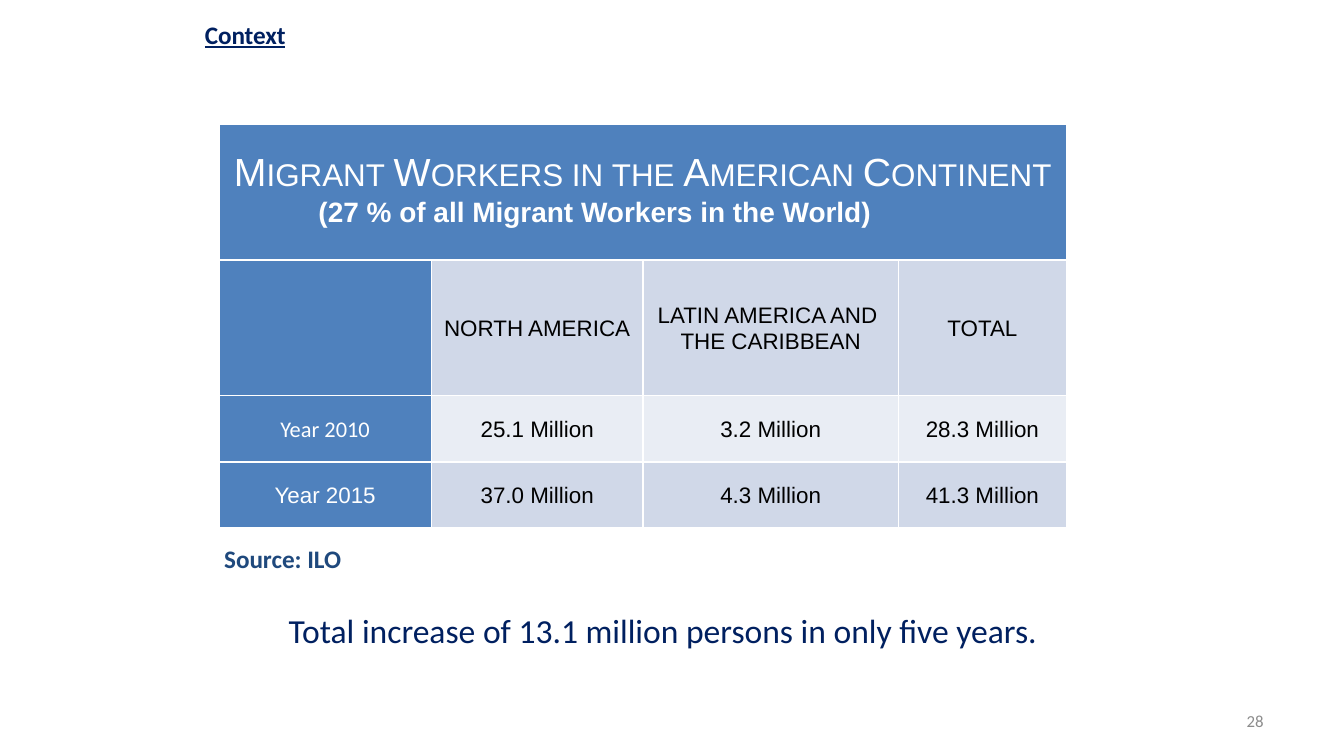
"""Build a slide with a table of migrant workers in the American continent."""
from lxml.etree import SubElement
from pptx import Presentation
from pptx.dml.color import RGBColor
from pptx.enum.text import MSO_ANCHOR as ANC, MSO_AUTO_SIZE as FIT, PP_ALIGN as AL
from pptx.oxml.ns import qn
from pptx.util import Inches, Pt

rgb = RGBColor.from_string
U = Inches(0.1)
NAVY, BLUE, WHITE, BLACK = "002060", "4F81BD", "FFFFFF", "000000"


def grid(*units):
    return [round(n * U) for n in units]


def write(p, text, size, color, name="Arial", align=AL.CENTER, spacing=None, **style):
    p.text, p.alignment, p.line_spacing = text, align, spacing
    for br in p._p.findall(qn("a:br")):
        SubElement(br, qn("a:rPr"), sz=str(size * 100))
    for r in p.runs:
        r.font.color.rgb = rgb(color)
        for key, value in {"size": Pt(size), "name": name, "bold": False, **style}.items():
            setattr(r.font, key, value)


prs = Presentation()
prs.slide_width, prs.slide_height = grid(100, 56.25)
s = prs.slides.add_slide(prs.slide_layouts[5])

title = s.shapes.title
title.left, title.top, title.width, title.height = grid(14.2, 0.95, 8.1, 3.3)
tf = title.text_frame
for key, value in {"word_wrap": False, "auto_size": FIT.SHAPE_TO_FIT_TEXT,
                   "vertical_anchor": ANC.TOP}.items():
    setattr(tf, key, value)
write(tf.paragraphs[0], "Context", 13.5, NAVY, "Calibri", bold=True, underline=True)

cols, rows = [15.8, 15.75, 19, 12.5], [10.1, 10.1, 4.93, 4.93]
table = s.shapes.add_table(len(rows), len(cols), *grid(16.3, 9.24, sum(cols), sum(rows))).table
for col, width in zip(table.columns, grid(*cols)):
    col.width = width
for row, height in zip(table.rows, grid(*rows)):
    row.height = height

data = [
    ["", "", "", ""],
    ["", "NORTH AMERICA", "LATIN AMERICA AND \vTHE CARIBBEAN", "TOTAL"],
    ["Year 2010", "25.1 Million", "3.2 Million", "28.3 Million"],
    ["Year 2015", "37.0 Million", "4.3 Million", "41.3 Million"],
]
bands = [BLUE, "D0D8E8", "E9EDF4", "D0D8E8"]
for i, texts in enumerate(data):
    for j, text in enumerate(texts):
        cell = table.cell(i, j)
        for key, value in {"margin_left": Inches(0.06), "margin_right": Inches(0.06),
                           "margin_top": 0, "margin_bottom": 0,
                           "vertical_anchor": ANC.MIDDLE if i else ANC.TOP}.items():
            setattr(cell, key, value)
        tcPr = cell._tc.get_or_add_tcPr()
        for side in "LRTB":
            ln = SubElement(tcPr, qn(f"a:ln{side}"), w=str(Pt(1)))
            SubElement(SubElement(ln, qn("a:solidFill")), qn("a:srgbClr"), val=WHITE)
        cell.fill.solid()
        cell.fill.fore_color.rgb = rgb(bands[i] if j else BLUE)
        if text:
            name = "Calibri" if text == "Year 2010" else "Arial"
            write(cell.text_frame.paragraphs[0], text, 12, BLACK if j else WHITE, name, spacing=1.07)

head = table.cell(0, 0)
head.merge(table.cell(0, len(cols) - 1))
head.margin_top = Inches(0.18)
tf = head.text_frame
p = tf.paragraphs[0]
write(p, "Migrant Workers in the American Continent", 21, WHITE, spacing=1.07)
p.runs[0].font._element.set("cap", "small")
p = tf.add_paragraph()
write(p, "(27 % of all Migrant Workers in the World)", 15, WHITE, align=AL.LEFT, spacing=1.07, bold=True)
p._p.get_or_add_pPr().set("marL", str(Inches(0.68)))

notes = [
    ((15.7, 39.95, 10.8, 3.3), False, ANC.TOP, "Source: ILO",
     {"size": 13.5, "color": "1F497D", "align": AL.JUSTIFY, "bold": True}),
    ((20.5, 44.7, 57.9, 4.3), True, ANC.TOP, "Total increase of 13.1 million persons in only five years.",
     {"size": 18, "color": NAVY, "align": AL.JUSTIFY, "spacing": 1.07}),
    ((71.7, 52.15, 23.3, 3), True, ANC.MIDDLE, "28",
     {"size": 9, "color": "8C8C8C", "align": AL.RIGHT}),
]
for place, wrap, anchor, text, style in notes:
    tf = s.shapes.add_textbox(*grid(*place)).text_frame
    tf.word_wrap, tf.vertical_anchor = wrap, anchor
    if anchor == ANC.TOP:
        tf.auto_size = FIT.SHAPE_TO_FIT_TEXT
    write(tf.paragraphs[0], text, name="Calibri", **style)

prs.save("out.pptx")
